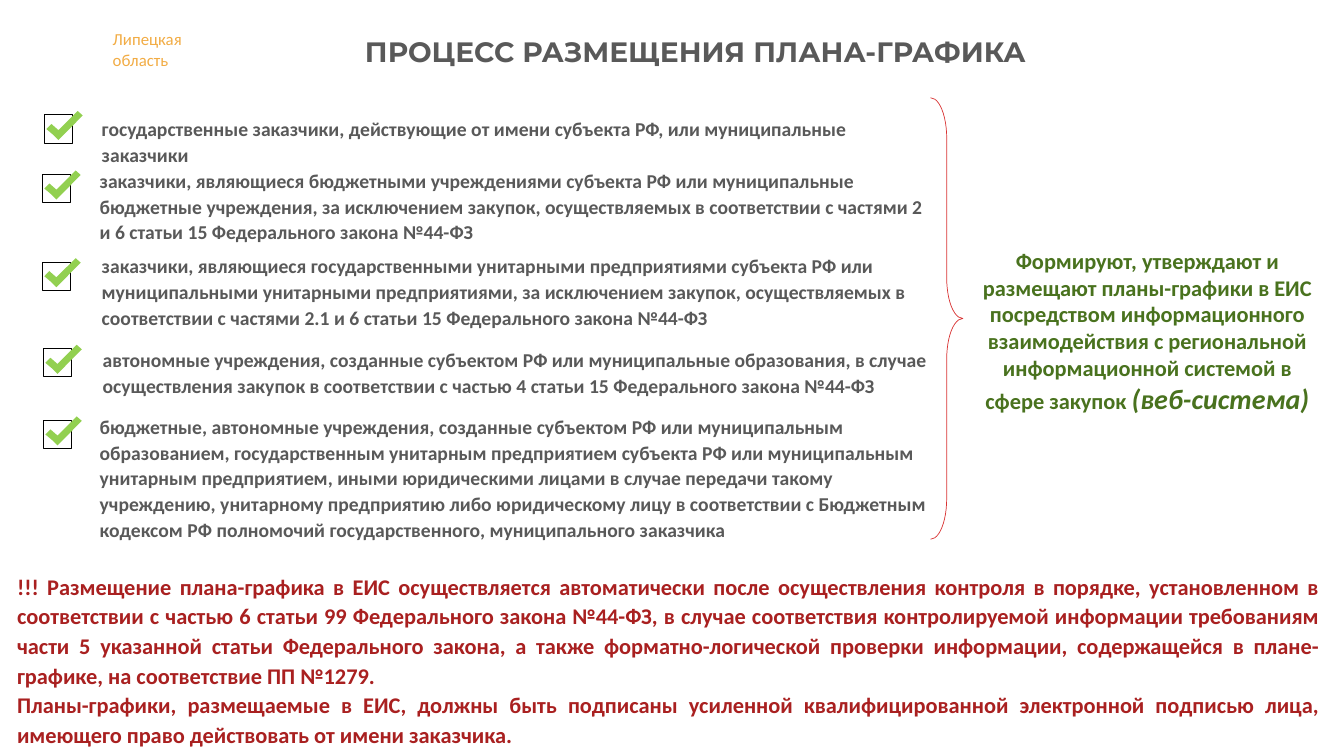
from pptx import Presentation
from pptx.dml.color import RGBColor
from pptx.enum.shapes import MSO_SHAPE as Shape
from pptx.enum.text import MSO_ANCHOR as Anchor, MSO_AUTO_SIZE as AutoSize, PP_ALIGN as Align
from pptx.util import Inches, Pt

WIDTH, HEIGHT = Inches(13.33), Inches(7.5)
BOX_SIDE = Inches(0.28)
GREY, GREEN, RED, GOLD = "595959", "49721E", "A92020", "F2AC44"
TICK_GREEN, BRACE_RED, BLACK = "92D050", "D93333", "000000"

# Corners of the tick, as shares of the checkbox side
TICK = [(0.25, 0.32), (0.5, 0.54), (1.18, -0.14), (1.36, 0.02),
        (0.5, 0.89), (0.32, 0.71), (0.07, 0.5)]

# Checkbox left and top, text area, text; lengths in percent of the slide
CUSTOMERS = [
    (3.3, 15.2, (6.83, 14.53, 62.57, 8.13),
     "государственные заказчики, действующие от имени субъекта РФ, или муниципальные заказчики"),
    (3.15, 23.07, (6.68, 21.33, 63.54, 11.73),
     "заказчики, являющиеся бюджетными учреждениями субъекта РФ или муниципальные бюджетные "
     "учреждения, за исключением закупок, осуществляемых в соответствии с частями 2 и 6 "
     "статьи 15 Федерального закона №44-ФЗ"),
    (3.15, 34.67, (6.83, 32.67, 63.02, 11.73),
     "заказчики, являющиеся государственными унитарными предприятиями субъекта РФ или "
     "муниципальными унитарными предприятиями, за исключением закупок, осуществляемых в "
     "соответствии с частями 2.1 и 6 статьи 15 Федерального закона №44-ФЗ"),
    (3.23, 46.13, (6.9, 45.07, 63.02, 8.27),
     "автономные учреждения, созданные субъектом РФ или муниципальные образования, в случае "
     "осуществления закупок в соответствии с частью 4 статьи 15 Федерального закона №44-ФЗ"),
    (3.23, 55.6, (6.68, 53.87, 63.47, 18.67),
     "бюджетные, автономные учреждения, созданные субъектом РФ или муниципальным образованием, "
     "государственным унитарным предприятием субъекта РФ или муниципальным унитарным "
     "предприятием, иными юридическими лицами в случае передачи такому учреждению, унитарному "
     "предприятию либо юридическому лицу в соответствии с Бюджетным кодексом РФ полномочий "
     "государственного, муниципального заказчика"),
]
ACTION = ("Формируют, утверждают и размещают планы-графики в ЕИС посредством информационного "
          "взаимодействия с региональной информационной системой в сфере закупок ")
NOTICE = [
    "!!! Размещение плана-графика в ЕИС осуществляется автоматически после осуществления "
    "контроля в порядке, установленном в соответствии с частью 6 статьи 99 Федерального закона "
    "№44-ФЗ, в случае соответствия контролируемой информации требованиям части 5 указанной "
    "статьи Федерального закона, а также форматно-логической проверки информации, содержащейся "
    "в плане-графике, на соответствие ПП №1279.",
    "Планы-графики, размещаемые в ЕИС, должны быть подписаны усиленной квалифицированной "
    "электронной подписью лица, имеющего право действовать от имени заказчика.",
]


def color(hex_value):
    return RGBColor.from_string(hex_value)


def place(left, top, *size):
    """Turn percentages of the slide into lengths."""
    sides = (WIDTH, HEIGHT) * 2
    return [int(side * share / 100) for side, share in zip(sides, (left, top, *size))]


def add_run(paragraph, text, hex_value, **font_format):
    run = paragraph.add_run()
    run.text = text
    run.font.color.rgb = color(hex_value)
    for name, value in font_format.items():
        setattr(run.font, name, value)


def add_text(slide, area, paragraphs, hex_value, size, font="Calibri", bold=True,
             align=Align.LEFT, spacing=1.0, anchor=Anchor.TOP, auto_size=AutoSize.SHAPE_TO_FIT_TEXT):
    frame = slide.shapes.add_textbox(*place(*area)).text_frame
    frame.word_wrap = True
    frame.auto_size = auto_size
    frame.vertical_anchor = anchor
    for index, text in enumerate(paragraphs):
        paragraph = frame.add_paragraph() if index else frame.paragraphs[0]
        paragraph.alignment = align
        paragraph.line_spacing = spacing
        add_run(paragraph, text, hex_value, name=font, size=Pt(size), bold=bold)
    return frame


def add_outline(slide, kind, area, hex_value, weight):
    shape = slide.shapes.add_shape(kind, *area)
    shape.shadow.inherit = False
    shape.fill.background()
    shape.line.color.rgb = color(hex_value)
    shape.line.width = Pt(weight)
    return shape


def add_checkbox(slide, left, top):
    x, y = place(left, top)
    add_outline(slide, Shape.RECTANGLE, (x, y, BOX_SIDE, BOX_SIDE), BLACK, 0.75)
    corners = [(x + int(BOX_SIDE * dx), y + int(BOX_SIDE * dy)) for dx, dy in TICK]
    builder = slide.shapes.build_freeform(*corners[0])
    builder.add_line_segments(corners[1:], close=True)
    tick = builder.convert_to_shape()
    tick.shadow.inherit = False
    tick.fill.solid()
    tick.fill.fore_color.rgb = color(TICK_GREEN)
    tick.line.fill.background()


def main():
    presentation = Presentation()
    presentation.slide_width, presentation.slide_height = WIDTH, HEIGHT
    slide = presentation.slides.add_slide(presentation.slide_layouts[6])

    add_text(slide, (7.65, 3.2, 6.83, 6.67), ["Липецкая", "область"], GOLD, 12, bold=False)
    add_text(slide, (14.25, 4.27, 75, 5.07), ["ПРОЦЕСС РАЗМЕЩЕНИЯ ПЛАНА-ГРАФИКА"], GREY, 20,
             font="Montserrat", align=Align.CENTER, anchor=Anchor.MIDDLE, auto_size=AutoSize.NONE)

    for left, top, area, text in CUSTOMERS:
        add_checkbox(slide, left, top)
        add_text(slide, area, [text], GREY, 14, spacing=1.1)

    brace = add_outline(slide, Shape.RIGHT_BRACE, place(69.24, 12.93, 2.4, 58.4), BRACE_RED, 0.5)
    brace.adjustments[0] = 1.26

    action = add_text(slide, (71.57, 32, 27.61, 23.73), [ACTION], GREEN, 16, align=Align.CENTER)
    add_run(action.paragraphs[0], "(веб-система)", GREEN,
            name="Calibri", size=Pt(20), bold=True, italic=True)
    add_text(slide, (0.53, 74.8, 98.42, 25.07), NOTICE, RED, 16, align=Align.JUSTIFY, spacing=1.1)

    presentation.save("out.pptx")


if __name__ == "__main__":
    main()
